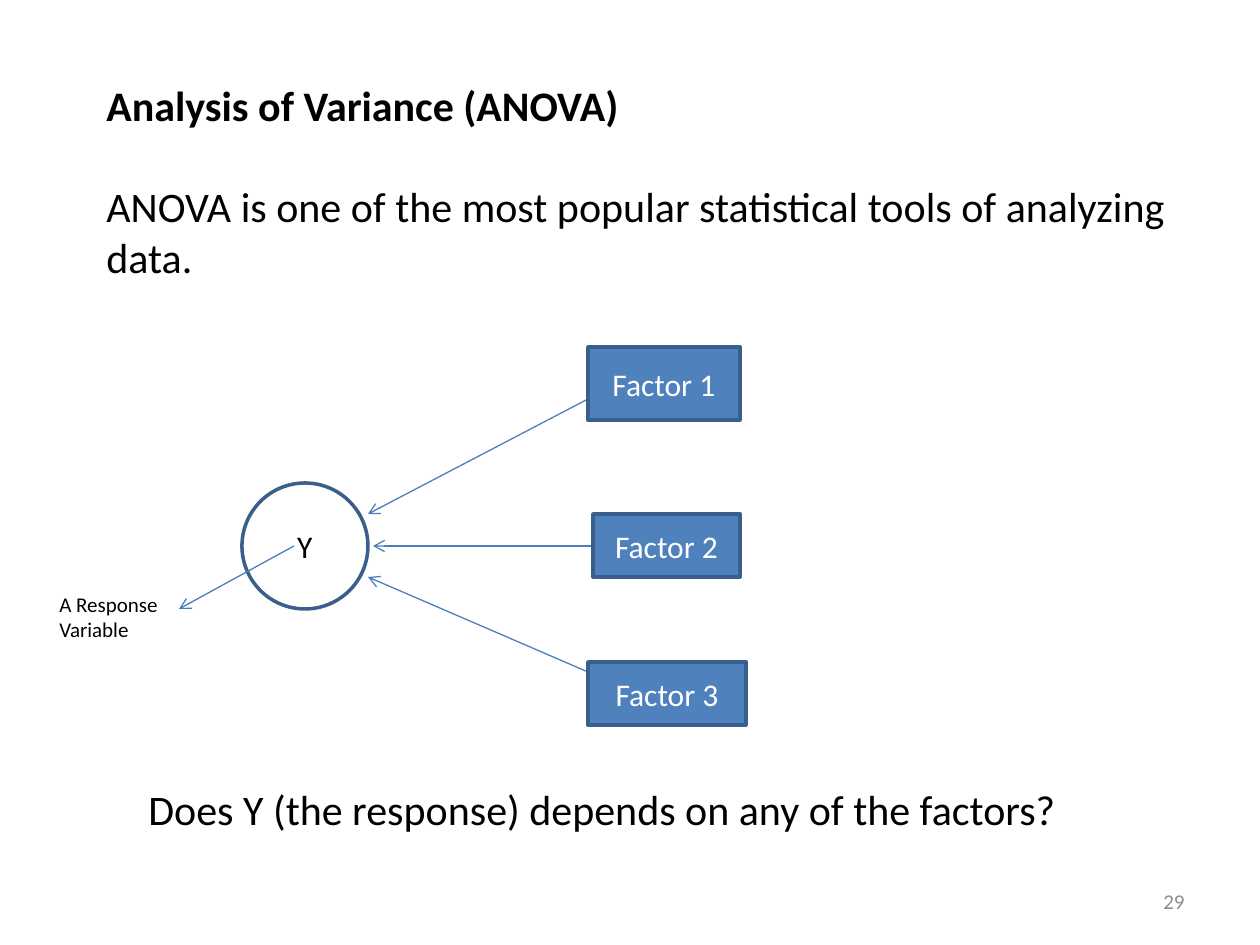
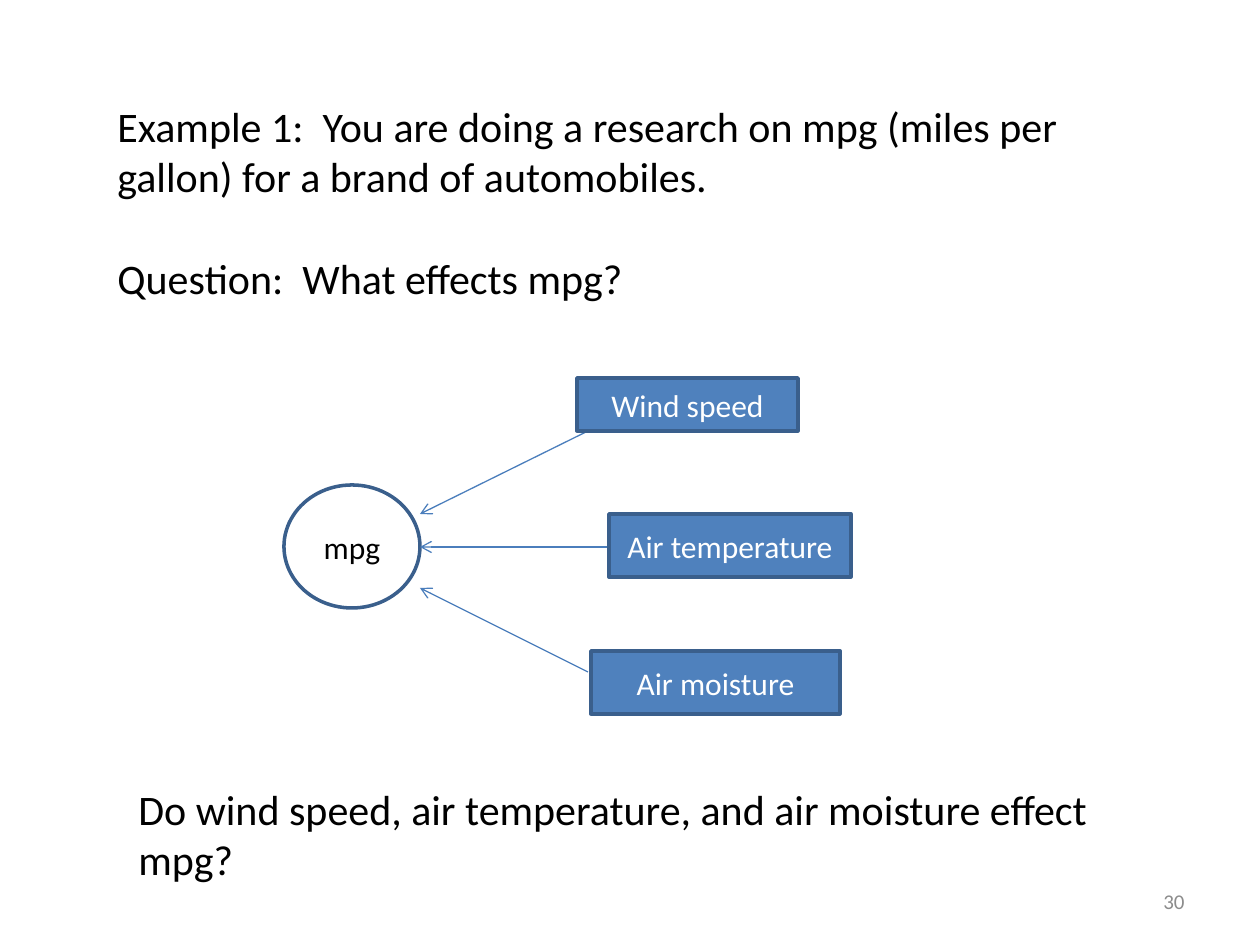
from dataclasses import dataclass

from lxml import etree
from pptx import Presentation
from pptx.dml.color import RGBColor
from pptx.enum.shapes import MSO_CONNECTOR, MSO_SHAPE
from pptx.enum.text import MSO_ANCHOR, PP_ALIGN
from pptx.oxml.ns import qn
from pptx.util import Emu, Pt

LEFT, CENTER, RIGHT = PP_ALIGN.LEFT, PP_ALIGN.CENTER, PP_ALIGN.RIGHT
TOP, MIDDLE = MSO_ANCHOR.TOP, MSO_ANCHOR.MIDDLE
RECTANGLE, OVAL = MSO_SHAPE.RECTANGLE, MSO_SHAPE.OVAL
STRAIGHT = MSO_CONNECTOR.STRAIGHT

PX_PER_INCH = 126
SLIDE_SIZE = (1260, 945)
PAGE_NUMBER_BOX = (903, 876, 294, 50)
FIRST_PAGE = 29


@dataclass(frozen=True)
class Theme:
    font: str = "Calibri"
    black: str = "000000"
    white: str = "FFFFFF"
    grey: str = "8C8C8C"
    factor_fill: str = "4F81BD"
    outline: str = "3A5F8C"
    arrow: str = "4B7EBC"
    body_size: int = 24
    shape_size: int = 18
    small_size: int = 12
    paragraph_gap: float = 29.3
    outline_width: float = 2
    arrow_width: float = 0.75


THEME = Theme()

# Boxes are (left, top, width, height); arrows are (start x, start y, end x, end y).
# Each paragraph is (text, bold); each factor is (name, box, arrow).
SLIDES = [
    {
        "intro": (
            [
                ("Analysis of Variance (ANOVA)", True),
                ("ANOVA is one of the most popular statistical tools of analyzing data.", False),
            ],
            (94, 73, 1103, 217),
        ),
        "response": ("Y", (242, 483, 126, 126)),
        "factors": [
            ("Factor 1", (588, 347, 152, 73), (588, 399, 368, 514)),
            ("Factor 2", (593, 514, 147, 63), (593, 546, 373, 546)),
            ("Factor 3", (588, 662, 158, 63), (588, 672, 368, 577)),
        ],
        "question": (
            "Does Y (the response) depends on any of the factors?",
            (136, 777, 998, 63),
        ),
        "callout": ("A Response Variable", (47, 585, 137, 63), (294, 546, 179, 609)),
    },
    {
        "intro": (
            [
                ("Example 1:  You are doing a research on mpg (miles per gallon) "
                 "for a brand of automobiles.", False),
                ("Question:  What effects mpg?", False),
            ],
            (105, 94, 966, 217),
        ),
        "response": ("mpg", (284, 485, 136, 123)),
        "factors": [
            ("Wind speed", (577, 378, 221, 53), (588, 431, 420, 514)),
            ("Air temperature", (609, 514, 242, 63), (609, 547, 420, 547)),
            ("Air moisture", (591, 651, 249, 63), (588, 672, 420, 588)),
        ],
        "question": (
            "Do wind speed, air temperature, and air moisture effect mpg?",
            (126, 777, 1008, 115),
        ),
    },
]


def emu(px):
    return Emu(round(px * 914400 / PX_PER_INCH))


def to_emu(lengths):
    return [emu(px) for px in lengths]


def color(code):
    return RGBColor.from_string(code)


def write(shape, paragraphs, size, text_color, align=LEFT, anchor=TOP):
    """Fill a shape with (text, bold) paragraphs, one blank line's height apart."""
    frame = shape.text_frame
    frame.word_wrap = True
    frame.vertical_anchor = anchor
    for index, (text, bold) in enumerate(paragraphs):
        paragraph = frame.add_paragraph() if index else frame.paragraphs[0]
        paragraph.alignment = align
        if index:
            paragraph.space_before = Pt(THEME.paragraph_gap)
        run = paragraph.add_run()
        run.text = text
        run.font.name = THEME.font
        run.font.size = Pt(size)
        run.font.bold = bold
        run.font.color.rgb = color(text_color)


def add_text(slide, box, paragraphs, size=THEME.body_size, text_color=THEME.black, **layout):
    write(slide.shapes.add_textbox(*to_emu(box)), paragraphs, size, text_color, **layout)


def add_node(slide, kind, box, label, fill, text_color):
    shape = slide.shapes.add_shape(kind, *to_emu(box))
    shape.shadow.inherit = False
    shape.fill.solid()
    shape.fill.fore_color.rgb = color(fill)
    shape.line.color.rgb = color(THEME.outline)
    shape.line.width = Pt(THEME.outline_width)
    write(shape, [(label, False)], THEME.shape_size, text_color, CENTER, MIDDLE)


def add_arrow(slide, ends):
    connector = slide.shapes.add_connector(STRAIGHT, *to_emu(ends))
    connector.line.color.rgb = color(THEME.arrow)
    connector.line.width = Pt(THEME.arrow_width)
    etree.SubElement(connector.line._get_or_add_ln(), qn("a:tailEnd"), type="arrow")
    etree.SubElement(connector._element.spPr, qn("a:effectLst"))


def build_slide(presentation, content, page):
    slide = presentation.slides.add_slide(presentation.slide_layouts[6])
    paragraphs, box = content["intro"]
    add_text(slide, box, paragraphs)

    label, box = content["response"]
    add_node(slide, OVAL, box, label, THEME.white, THEME.black)
    for _, _, arrow in content["factors"]:
        add_arrow(slide, arrow)
    for name, box, _ in content["factors"]:
        add_node(slide, RECTANGLE, box, name, THEME.factor_fill, THEME.white)

    question, box = content["question"]
    add_text(slide, box, [(question, False)])
    if "callout" in content:
        label, box, arrow = content["callout"]
        add_arrow(slide, arrow)
        add_text(slide, box, [(label, False)], THEME.small_size)
    add_text(slide, PAGE_NUMBER_BOX, [(str(page), False)], THEME.small_size, THEME.grey,
             align=RIGHT, anchor=MIDDLE)


def main():
    presentation = Presentation()
    presentation.slide_width, presentation.slide_height = to_emu(SLIDE_SIZE)
    for page, content in enumerate(SLIDES, FIRST_PAGE):
        build_slide(presentation, content, page)
    presentation.save("out.pptx")


if __name__ == "__main__":
    main()
